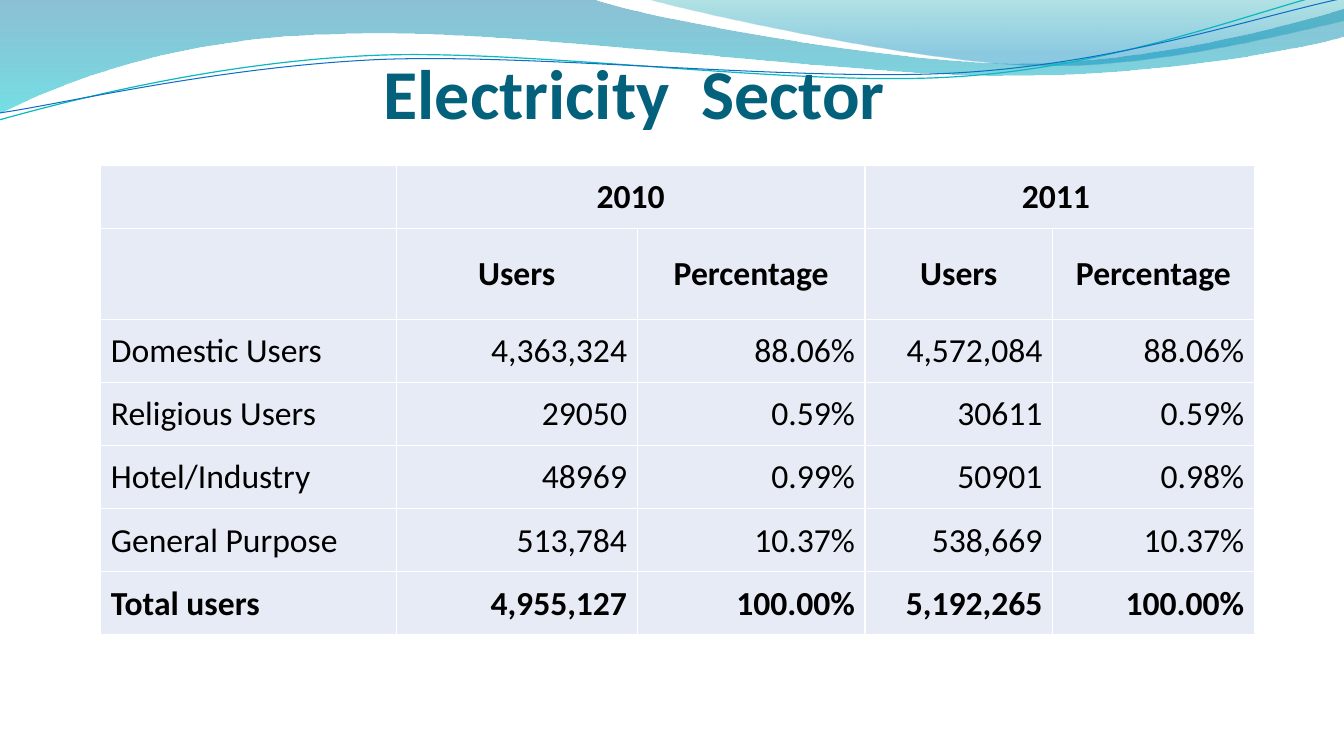
from dataclasses import dataclass

from pptx import Presentation
from pptx.dml.color import RGBColor
from pptx.enum.text import MSO_ANCHOR as ANCHOR, PP_ALIGN as ALIGN
from pptx.oxml.xmlchemy import OxmlElement
from pptx.util import Inches, Pt


@dataclass(frozen=True)
class Theme:
    font: str = "Calibri"
    title: str = "04617B"
    text: str = "000000"
    cell: str = "E7EBF5"
    border: str = "FFFFFF"
    title_size: int = 50
    cell_size: int = 24
    # Gradient stops: position, colour, opacity in percent
    band: tuple = ((0, "0074A1", 45), (1, "00C6CF", 55))
    crest: tuple = ((0, "00A1A9", 30), (0.8, "008BBF", 45))
    teal_line: tuple = ("0AB8BF", 0.85)
    blue_line: tuple = ("0F6FC6", 0.75)


theme = Theme()


def add_wave(shapes, start, segments, closed):
    """Draw straight (x, y) and cubic (x1, y1, x2, y2, x, y) segments, in inches."""
    builder = shapes.build_freeform(Inches(start[0]), Inches(start[1]))
    ends = [(Inches(seg[-2]), Inches(seg[-1])) for seg in segments]
    builder.add_line_segments(ends, close=closed)
    wave = builder.convert_to_shape()
    wave.shadow.inherit = False
    for line, seg in zip(wave._element.spPr.xpath(".//a:lnTo"), segments):
        if len(seg) == 2:
            continue
        curve = OxmlElement("a:cubicBezTo")
        for x, y in zip(seg[::2], seg[1::2]):
            pt = OxmlElement("a:pt")
            pt.set("x", str(Inches(x) - wave.left))
            pt.set("y", str(Inches(y) - wave.top))
            curve.append(pt)
        line.getparent().replace(line, curve)
    return wave


def write(tf, text, size, color, bold, align):
    p = tf.paragraphs[0]
    p.alignment = align
    r = p.add_run()
    r.text = text
    for name, value in {"name": theme.font, "size": Pt(size), "bold": bold}.items():
        setattr(r.font, name, value)
    r.font.color.rgb = RGBColor.from_string(color)


prs = Presentation()
prs.slide_width, prs.slide_height = Inches(13.33), Inches(7.5)
s = prs.slides.add_slide(prs.slide_layouts[5])

# Filled waves across the top
filled_waves = [
    (theme.band, (0, 0), [
        (5.87, -0.01),
        (6.34, 0.17, 8.85, 0.63, 10.11, 0.63),
        (11.38, 0.63, 12.78, 0.26, 13.33, 0.09),
        (13.35, 0.36),
        (13.11, 0.44, 11.6, 0.76, 9.94, 0.75),
        (8.29, 0.75, 5.09, 0.28, 3.43, 0.34),
        (1.72, 0.36, 0.61, 0.83, -0.01, 1.13),
        (0, 0)]),
    (theme.crest, (6.39, -0.01), [
        (6.79, 0.11, 9.09, 0.62, 10.25, 0.65),
        (11.41, 0.69, 12.82, 0.32, 13.33, 0.21),
        (13.33, 0),
        (6.39, -0.01)]),
]
for stops, start, segments in filled_waves:
    wave = add_wave(s.shapes, start, segments, True)
    wave.line.fill.background()
    wave.fill.gradient()
    wave.fill.gradient_angle = 270
    for stop, (position, color, _) in zip(wave.fill.gradient_stops, stops):
        stop.position = position
        stop.color.rgb = RGBColor.from_string(color)
    for clr, (_, _, opacity) in zip(wave._element.spPr.xpath(".//a:gs/a:srgbClr"), stops):
        alpha = OxmlElement("a:alpha")
        alpha.set("val", str(opacity * 1000))
        clr.append(alpha)

# Thin wave lines
wave_lines = [
    (theme.teal_line, (-0.01, 1.19), [
        (0.64, 1.01, 2.11, 0.62, 3.69, 0.55),
        (5.27, 0.48, 7.9, 0.87, 9.5, 0.76),
        (11.1, 0.66, 12.52, 0.08, 13.31, -0.1)]),
    (theme.blue_line, (0, 1.12), [
        (0.63, 1.03, 2.18, 0.66, 3.78, 0.59),
        (5.37, 0.53, 7.96, 0.82, 9.55, 0.72),
        (11.15, 0.62, 12.55, 0.14, 13.34, -0.02)]),
]
for (color, width), start, segments in wave_lines:
    wave = add_wave(s.shapes, start, segments, False)
    wave.fill.background()
    wave.line.color.rgb = RGBColor.from_string(color)
    wave.line.width = Pt(width)

# Title, in front of the waves
title = s.shapes.title
s.shapes._spTree.append(title._element)
title.left, title.top, title.width, title.height = map(Inches, (1.63, 0.29, 9.33, 1.03))
tf = title.text_frame
tf.vertical_anchor = ANCHOR.BOTTOM
tf.margin_left = tf.margin_right = tf.margin_bottom = 0
write(tf, "Electricity  Sector", theme.title_size, theme.title, True, ALIGN.CENTER)

# Table of users
rows = [
    ("", "2010", "", "2011 ", ""),
    ("", "Users", "Percentage", "Users", "Percentage"),
    ("Domestic Users", "4,363,324", "88.06%", "4,572,084", "88.06%"),
    ("Religious Users", "29050", "0.59%", "30611", "0.59%"),
    ("Hotel/Industry", "48969", "0.99%", "50901", "0.98%"),
    ("General Purpose", "513,784", "10.37%", "538,669", "10.37%"),
    ("Total users", "4,955,127", "100.00%", "5,192,265", "100.00%"),
]
col_widths = (2.93, 2.39, 2.26, 1.86, 2)
table_height, subheader_height = 4.66, 0.9
row_height = (table_height - subheader_height) / (len(rows) - 1)
table = s.shapes.add_table(len(rows), len(col_widths), Inches(1), Inches(1.64),
                           Inches(sum(col_widths)), Inches(table_height)).table
table.first_row = table.horz_banding = False
for column, width in zip(table.columns, col_widths):
    column.width = Inches(width)
for i, row in enumerate(table.rows):
    row.height = Inches(subheader_height if i == 1 else row_height)
for first in (1, 3):
    table.cell(0, first).merge(table.cell(0, first + 1))

cell_format = {"vertical_anchor": ANCHOR.MIDDLE, "margin_left": Inches(0.1),
               "margin_right": Inches(0.1), "margin_top": Inches(0.01), "margin_bottom": 0}
for i, row in enumerate(rows):
    header, total = i < 2, i == len(rows) - 1
    for j, text in enumerate(row):
        cell = table.cell(i, j)
        for name, value in cell_format.items():
            setattr(cell, name, value)
        tcPr = cell._tc.get_or_add_tcPr()
        for side in ("L", "R", "T", "B"):
            ln = OxmlElement(f"a:ln{side}")
            ln.set("w", str(Pt(1)))
            fill = OxmlElement("a:solidFill")
            clr = OxmlElement("a:srgbClr")
            clr.set("val", theme.border)
            fill.append(clr)
            ln.append(fill)
            tcPr.append(ln)
        cell.fill.solid()
        cell.fill.fore_color.rgb = RGBColor.from_string(theme.cell)
        if text:
            align = ALIGN.CENTER if header else ALIGN.RIGHT if j else ALIGN.LEFT
            write(cell.text_frame, text, theme.cell_size, theme.text, header or total, align)

prs.save("out.pptx")
